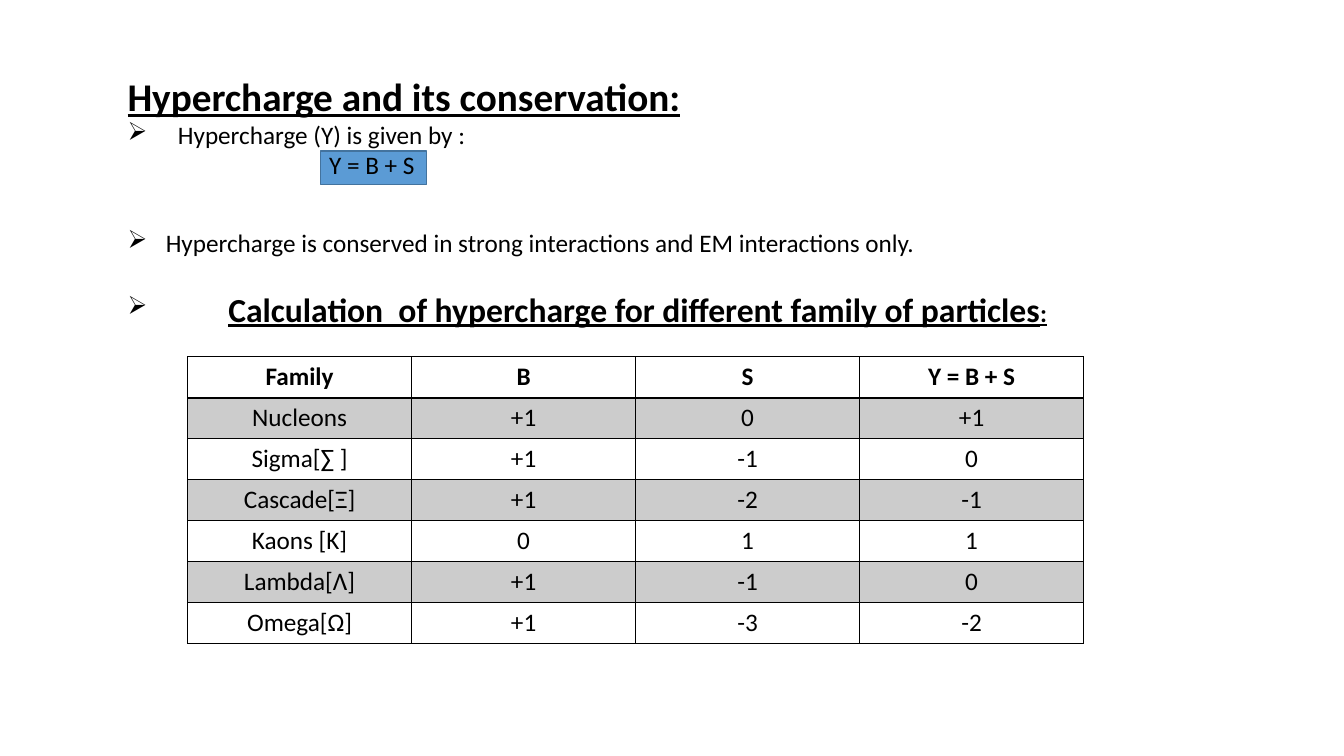
from dataclasses import dataclass

from lxml import etree
from pptx import Presentation
from pptx.dml.color import RGBColor
from pptx.enum.shapes import MSO_SHAPE
from pptx.enum.text import PP_ALIGN
from pptx.oxml.ns import qn
from pptx.util import Inches, Pt

RECTANGLE = MSO_SHAPE.RECTANGLE
CENTER = PP_ALIGN.CENTER

SLIDE_W, SLIDE_H = Inches(13.33), Inches(7.5)
GRID_COLS, GRID_ROWS = 120, 75


@dataclass(frozen=True)
class Theme:
    font: str = "Calibri"
    ink: str = "000000"
    formula_fill: str = "5B9BD5"
    formula_line: str = "43739E"
    band_opacity: int = 20
    title: int = 28
    heading: int = 24
    body: int = 18
    thin: int = 1
    thick: int = 2


THEME = Theme()

FAMILIES = [
    ("Family", "B", "S", "Y = B + S"),
    ("Nucleons", "+1", "0", "+1"),
    ("Sigma[∑ ]", "+1", "-1", "0"),
    ("Cascade[Ξ]", "+1", "-2", "-1"),
    ("Kaons [K]", "0", "1", "1"),
    ("Lambda[Λ]", "+1", "-1", "0"),
    ("Omega[Ω]", "+1", "-3", "-2"),
]


def grid(col, row, cols, rows):
    """Turn grid columns and rows into left, top, width and height."""
    unit_w, unit_h = SLIDE_W / GRID_COLS, SLIDE_H / GRID_ROWS
    return (round(col * unit_w), round(row * unit_h),
            round(cols * unit_w), round(rows * unit_h))


def style_run(run, size=THEME.body, strong=False, underline=False):
    font = run.font
    font.name = THEME.font
    font.size = Pt(size)
    font.bold = strong
    font.underline = underline
    font.color.rgb = RGBColor.from_string(THEME.ink)


def set_indent(paragraph, margin, hanging=0.0):
    properties = paragraph._p.get_or_add_pPr()
    properties.set("marL", str(Inches(margin)))
    properties.set("indent", str(-Inches(hanging)))
    return properties


def add_bullet(paragraph, indent, percent=100):
    properties = set_indent(paragraph, indent, indent)
    size = etree.SubElement(properties, qn("a:buSzPct"))
    size.set("val", str(percent * 1000))
    etree.SubElement(properties, qn("a:buChar")).set("char", "➢")


def add_formula_box(slide):
    box = slide.shapes.add_shape(RECTANGLE, *grid(28.6, 15, 9.5, 3.3))
    box.shadow.inherit = False
    box.fill.solid()
    box.fill.fore_color.rgb = RGBColor.from_string(THEME.formula_fill)
    box.line.color.rgb = RGBColor.from_string(THEME.formula_line)
    box.line.width = Pt(THEME.thin)


def add_explanation(slide):
    frame = slide.shapes.add_textbox(*grid(10.5, 6.7, 104, 32.6)).text_frame
    frame.word_wrap = True
    frame.text = "\n".join([
        "Hypercharge and its conservation:",
        "Hypercharge (Y) is given by :",
        "Y = B + S",
        "Hypercharge is conserved in strong interactions and EM interactions only.",
        "Calculation  of hypercharge for different family of particles",
    ])
    title, definition, formula, conservation, calculation = frame.paragraphs
    for paragraph in (definition, formula, conservation):
        style_run(paragraph.runs[0])
    style_run(title.runs[0], THEME.title, True, True)
    style_run(calculation.runs[0], THEME.heading, True, True)
    colon = calculation.add_run()
    colon.text = ":"
    style_run(colon, THEME.body, True, True)

    # Gaps above the later points
    conservation.space_before = Pt(34)
    calculation.space_before = Pt(22)

    # Bullets and indents
    add_bullet(definition, 0.5)
    set_indent(formula, 2)
    add_bullet(conservation, 0.38)
    add_bullet(calculation, 1, 75)


def add_border(cell, side, width):
    line = etree.SubElement(cell._tc.get_or_add_tcPr(), qn(f"a:ln{side}"))
    line.set("w", str(Pt(width)))
    fill = etree.SubElement(line, qn("a:solidFill"))
    etree.SubElement(fill, qn("a:srgbClr")).set("val", THEME.ink)


def fill_band(cell):
    cell.fill.solid()
    cell.fill.fore_color.rgb = RGBColor.from_string(THEME.ink)
    color = cell._tc.tcPr.find(qn("a:solidFill")).find(qn("a:srgbClr"))
    alpha = etree.SubElement(color, qn("a:alpha"))
    alpha.set("val", str(THEME.band_opacity * 1000))


def style_cell(cell, text, row):
    is_header = row == 0
    cell.text = text
    paragraph = cell.text_frame.paragraphs[0]
    paragraph.alignment = CENTER
    style_run(paragraph.runs[0], strong=is_header)
    for side in "LRTB":
        below_header = (is_header and side == "B") or (row == 1 and side == "T")
        add_border(cell, side, THEME.thick if below_header else THEME.thin)
    if row % 2:
        fill_band(cell)
    else:
        cell.fill.background()


def add_family_table(slide):
    row_count, col_count = len(FAMILIES), len(FAMILIES[0])
    area = grid(16.75, 35.4, 20 * col_count, 4.06 * row_count)
    table = slide.shapes.add_table(row_count, col_count, *area).table
    table.first_row = False
    table.horz_banding = False
    for row, family in enumerate(FAMILIES):
        for col, text in enumerate(family):
            style_cell(table.cell(row, col), text, row)


def main():
    deck = Presentation()
    deck.slide_width, deck.slide_height = SLIDE_W, SLIDE_H
    slide = deck.slides.add_slide(deck.slide_layouts[6])
    add_formula_box(slide)
    add_explanation(slide)
    add_family_table(slide)
    deck.save("out.pptx")


if __name__ == "__main__":
    main()
